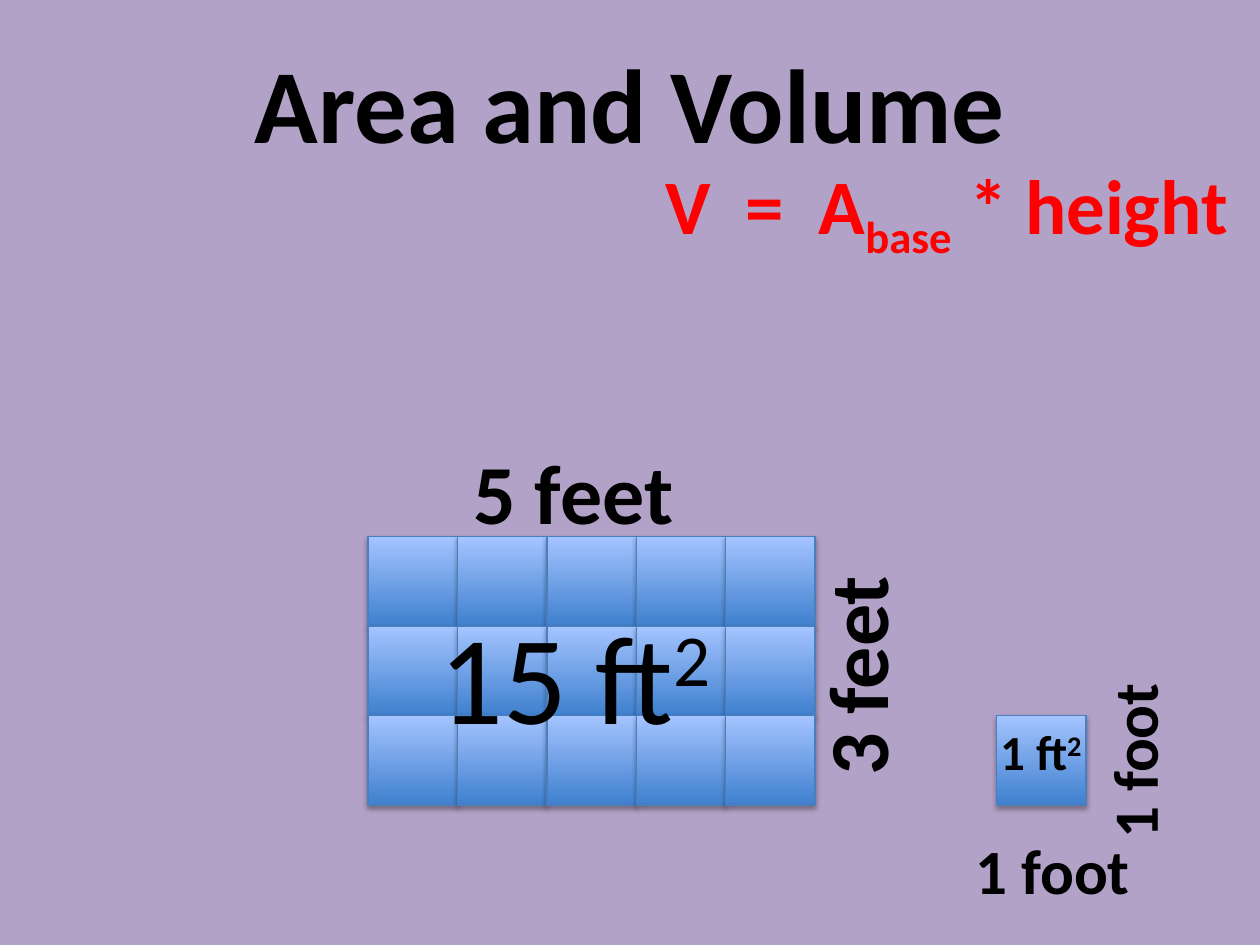
from lxml import etree
from pptx import Presentation, util as u
from pptx.dml.color import RGBColor
from pptx.enum import shapes, text
from pptx.oxml import parse_xml

# The slide is a grid of 100 columns by 75 rows; a tile stands for one square foot.
COLS, ROWS = 100, 75
CELL = u.Inches(0.1)
TILE = 7.1
AREA_LEFT, AREA_TOP = 29.2, 42.6
AREA_COLS, AREA_ROWS = 5, 3
NS = "http://schemas.openxmlformats.org/drawingml/2006/main"
SHADOW = f"""<a:effectLst xmlns:a="{NS}">
  <a:outerShdw blurRad="{u.Pt(3.1)}" dist="{u.Pt(1.8)}" dir="5400000" rotWithShape="0">
    <a:srgbClr val="000000"><a:alpha val="35000"/></a:srgbClr>
  </a:outerShdw>
</a:effectLst>"""

rgb = RGBColor.from_string


def write(parent, content, box, size, bold=True, color="000000", wrap=True,
          rotation=0, align=text.PP_ALIGN.LEFT, anchor=text.MSO_ANCHOR.TOP,
          fit=text.MSO_AUTO_SIZE.SHAPE_TO_FIT_TEXT):
    """Add a text box; content is a list of (text, baseline shift in percent)."""
    sp = parent.shapes.add_textbox(*(round(n * CELL) for n in box))
    sp.rotation = rotation
    tf = sp.text_frame
    tf.word_wrap, tf.auto_size, tf.vertical_anchor = wrap, fit, anchor
    p = tf.paragraphs[0]
    p.alignment = align
    for words, shift in content:
        r = p.add_run()
        r.text = words
        r.font.name, r.font.size, r.font.bold = "Calibri", u.Pt(size), bold
        r.font.color.rgb = rgb(color)
        if shift:
            r._r.get_or_add_rPr().set("baseline", str(shift * 1000))


def add_tile(parent, left, top):
    sp = parent.shapes.add_shape(shapes.MSO_SHAPE.RECTANGLE,
                                 *(round(n * CELL) for n in (left, top, TILE, TILE)))
    sp.fill.gradient()
    sp.fill.gradient_angle = 90
    for stop, color in zip(sp.fill.gradient_stops, ("3F80CE", "A4C4FF")):
        stop.color.rgb = rgb(color)
    sp.line.color.rgb = rgb("4B7EBC")
    sp.line.width = u.Pt(0.75)
    sp._element.spPr.append(parse_xml(SHADOW))


prs = Presentation()
prs.slide_width, prs.slide_height = COLS * CELL, ROWS * CELL
s = prs.slides.add_slide(prs.slide_layouts[6])
s.background.fill.solid()
s.background.fill.fore_color.rgb = rgb("B3A2C7")

write(s, [("Area and Volume", 0)], (7.5, 0, 85, 16.1), 60,
      align=text.PP_ALIGN.CENTER, anchor=text.MSO_ANCHOR.MIDDLE,
      fit=text.MSO_AUTO_SIZE.NONE)

# Side lengths of the large rectangle
write(s, [("5 feet", 0)], (36.6, 34.5, 23.4, 9.1), 48)
write(s, [("3 feet", 0)], (56.2, 46.3, 23.4, 9.1), 48, rotation=270)

# Unit square, level with the bottom row of the rectangle
add_tile(s, 79.1, AREA_TOP + (AREA_ROWS - 1) * TILE)
write(s, [("1 foot", 0)], (76.4, 65.5, 14.5, 7.1), 36, wrap=False)
write(s, [("1 foot", 0)], (82.7, 56.7, 14.5, 7.1), 36, wrap=False, rotation=270)
write(s, [("1 ft", 0), ("2", 30)], (78.4, 56.8, 8.7, 5.7), 28, wrap=False)

write(s, [("V  =  A", 0), ("base", -25), (" * height", 0)],
      (51.8, 12, 49.1, 11.4), 44, color="FF0000")

# Large rectangle made of unit squares
area = s.shapes.add_group_shape()
for row in range(AREA_ROWS):
    for col in range(AREA_COLS):
        add_tile(area, AREA_LEFT + col * TILE, AREA_TOP + row * TILE)
write(area, [("15 ft", 0), ("2", 30)], (33.9, 47, 27.4, 13.1), 72, bold=False)

prs.save("out.pptx")
